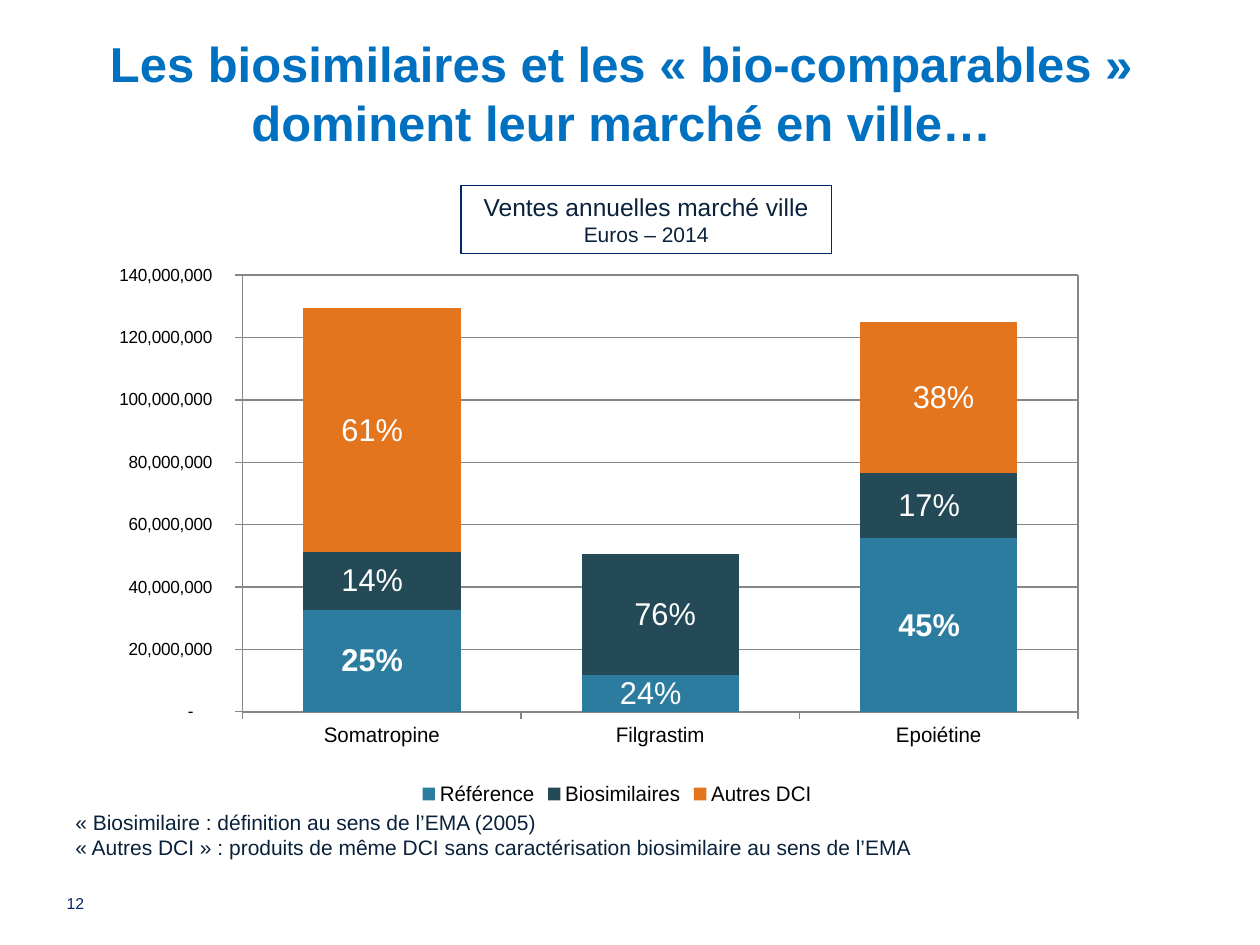
from lxml import etree
from pptx import Presentation
from pptx.chart.data import CategoryChartData
from pptx.dml.color import RGBColor
from pptx.enum.chart import XL_CHART_TYPE as ChartType, XL_LEGEND_POSITION as LegendPosition
from pptx.enum.chart import XL_TICK_MARK as TickMark
from pptx.enum.shapes import MSO_SHAPE as Shape
from pptx.enum.text import MSO_ANCHOR as Anchor, PP_ALIGN as Align
from pptx.oxml import parse_xml
from pptx.oxml.ns import nsdecls, qn
from pptx.util import Pt

FONT = "Arial"
COLORS = {
    "title": "0070C0", "text": "09213B", "navy": "002868", "white": "FFFFFF",
    "black": "000000", "grid": "868686",
    "Référence": "2C7C9F", "Biosimilaires": "244A58", "Autres DCI": "E2751D",
}
NUMBER_FORMAT = r'_-* #,##0\ _€_-;\-* #,##0\ _€_-;_-* "-"??\ _€_-'
DRUGS = ["Somatropine", "Filgrastim", "Epoiétine"]
SALES = {
    "Référence": [32_800_000, 11_900_000, 55_700_000],
    "Biosimilaires": [18_500_000, 38_600_000, 20_900_000],
    "Autres DCI": [78_100_000, None, 48_200_000],
}
# Label text, bold, horizontal shift as a share of the chart width
LEFT, RIGHT = -0.01, 0.005
SHARES = {
    "Référence": [("25%", True, LEFT), ("24%", False, LEFT), ("45%", True, LEFT)],
    "Biosimilaires": [("14%", False, LEFT), ("76%", False, RIGHT), ("17%", False, LEFT)],
    "Autres DCI": [("61%", False, LEFT), None, ("38%", False, RIGHT)],
}


def rgb(name):
    return RGBColor.from_string(COLORS[name])


def style_font(font, size, color, bold=False):
    font.name, font.size, font.bold = FONT, Pt(size), bold
    font.color.rgb = rgb(color)


def fill_text(shape, lines, color, align=Align.LEFT, bold=False, anchor=Anchor.TOP):
    """Write (text, size) lines into a shape, one paragraph each."""
    frame = shape.text_frame
    frame.word_wrap = True
    frame.vertical_anchor = anchor
    for index, (text, size) in enumerate(lines):
        para = frame.add_paragraph() if index else frame.paragraphs[0]
        para.text, para.alignment = text, align
        style_font(para.font, size, color, bold)
    return frame


def add_title(page, box):
    text = "Les biosimilaires et les « bio-comparables » dominent leur marché en ville…"
    fill_text(page.shapes.add_textbox(*box), [(text, 28)], "title",
              Align.CENTER, True, Anchor.BOTTOM)


def add_caption(page, box):
    caption = page.shapes.add_shape(Shape.RECTANGLE, *box)
    caption.shadow.inherit = False
    caption.fill.solid()
    caption.fill.fore_color.rgb = rgb("white")
    caption.line.color.rgb = rgb("navy")
    caption.line.width = Pt(0.75)
    fill_text(caption, [("Ventes annuelles marché ville", 14), ("Euros – 2014", 12)],
              "text", Align.CENTER)


def add_notes(page, box):
    fill_text(page.shapes.add_textbox(*box), [
        ("« Biosimilaire : définition au sens de l’EMA (2005)", 12),
        ("« Autres DCI » : produits de même DCI sans caractérisation "
         "biosimilaire au sens de l’EMA", 12),
    ], "text")


def add_page_number(page, box):
    frame = fill_text(page.shapes.add_textbox(*box), [("12", 9)], "navy")
    frame.margin_left = frame.margin_right = frame.margin_top = frame.margin_bottom = 0


def manual_layout(**settings):
    """Build a c:layout element from its settings, in schema order."""
    layout = parse_xml(f"<c:layout {nsdecls('c')}><c:manualLayout/></c:layout>")
    for name, value in settings.items():
        etree.SubElement(layout[0], qn(f"c:{name}")).set("val", str(value))
    return layout


def label_series(series):
    for point, share in zip(series.points, SHARES[series.name]):
        if share is None:
            continue
        text, bold, shift = share
        para = point.data_label.text_frame.paragraphs[0]
        span = para.add_run()
        span.text = text
        style_font(span.font, 18, "white", bold)
    labels = series.data_labels
    for label in labels._element.findall(qn("c:dLbl")):
        index = label.find(qn("c:idx"))
        shift = SHARES[series.name][int(index.get("val"))][2]
        for old in label.findall(qn("c:layout")):
            label.remove(old)
        index.addnext(manual_layout(x=shift, y=0))
    labels.show_value = True
    style_font(labels.font, 18, "white")


def style_axes(chart):
    values, drugs = chart.value_axis, chart.category_axis
    values.minimum_scale, values.maximum_scale = 0, 140_000_000
    values.major_unit = 20_000_000
    values.has_major_gridlines = True
    values.tick_labels.number_format = NUMBER_FORMAT
    values.tick_labels.number_format_is_linked = False
    for axis, size in ((values, 10), (drugs, 12)):
        axis.major_tick_mark = TickMark.OUTSIDE
        style_font(axis.tick_labels.font, size, "black")
    for line in (values.format.line, drugs.format.line, values.major_gridlines.format.line):
        line.color.rgb = rgb("grid")
        line.width = Pt(0.75)


def add_sales_chart(page, box):
    data = CategoryChartData()
    data.categories = DRUGS
    for name, amounts in SALES.items():
        data.add_series(name, amounts)
    chart = page.shapes.add_chart(ChartType.COLUMN_STACKED, *box, data).chart
    chart.has_title = False
    style_font(chart.font, 10, "black")
    plot = chart.plots[0]
    plot.gap_width, plot.overlap, plot.vary_by_categories = 77, 100, False
    for series in plot.series:
        series.format.fill.solid()
        series.format.fill.fore_color.rgb = rgb(series.name)
        label_series(series)
    style_axes(chart)
    chart.has_legend = True
    chart.legend.position = LegendPosition.BOTTOM
    chart.legend.include_in_layout = False
    style_font(chart.legend.font, 12, "black")

    area = chart._chartSpace.chart.plotArea
    for old in area.findall(qn("c:layout")):
        area.remove(old)
    area.insert(0, manual_layout(layoutTarget="inner", xMode="edge", yMode="edge",
                                 x=0.11, y=0.02, w=0.87, h=0.8))
    area.append(parse_xml(
        f"<c:spPr {nsdecls('c', 'a')}><a:noFill/><a:ln w='9525'><a:solidFill>"
        f"<a:srgbClr val='{COLORS['grid']}'/></a:solidFill></a:ln></c:spPr>"))


def main():
    deck = Presentation()
    deck.slide_width, deck.slide_height = Pt(720), Pt(540)
    page = deck.slides.add_slide(deck.slide_layouts[6])
    regions = [
        (add_title, (31, 26, 648, 64)),
        (add_page_number, (38, 511, 18, 11)),
        (add_caption, (263.5, 106, 211.5, 39)),
        (add_notes, (36, 459, 493, 36)),
        (add_sales_chart, (65.5, 151, 561.5, 312)),
    ]
    for add_region, box in regions:
        add_region(page, [Pt(length) for length in box])
    deck.save("out.pptx")


if __name__ == "__main__":
    main()
